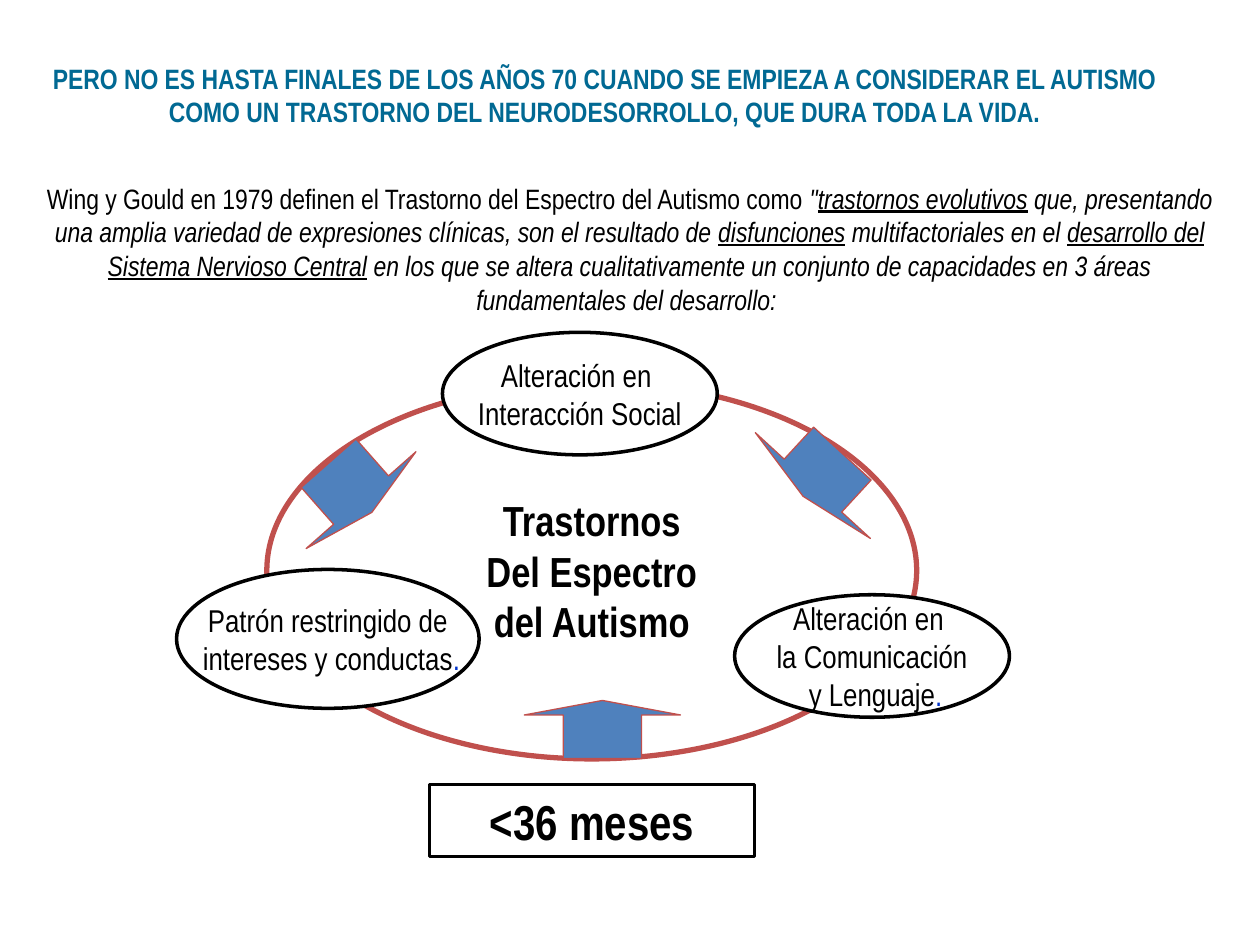
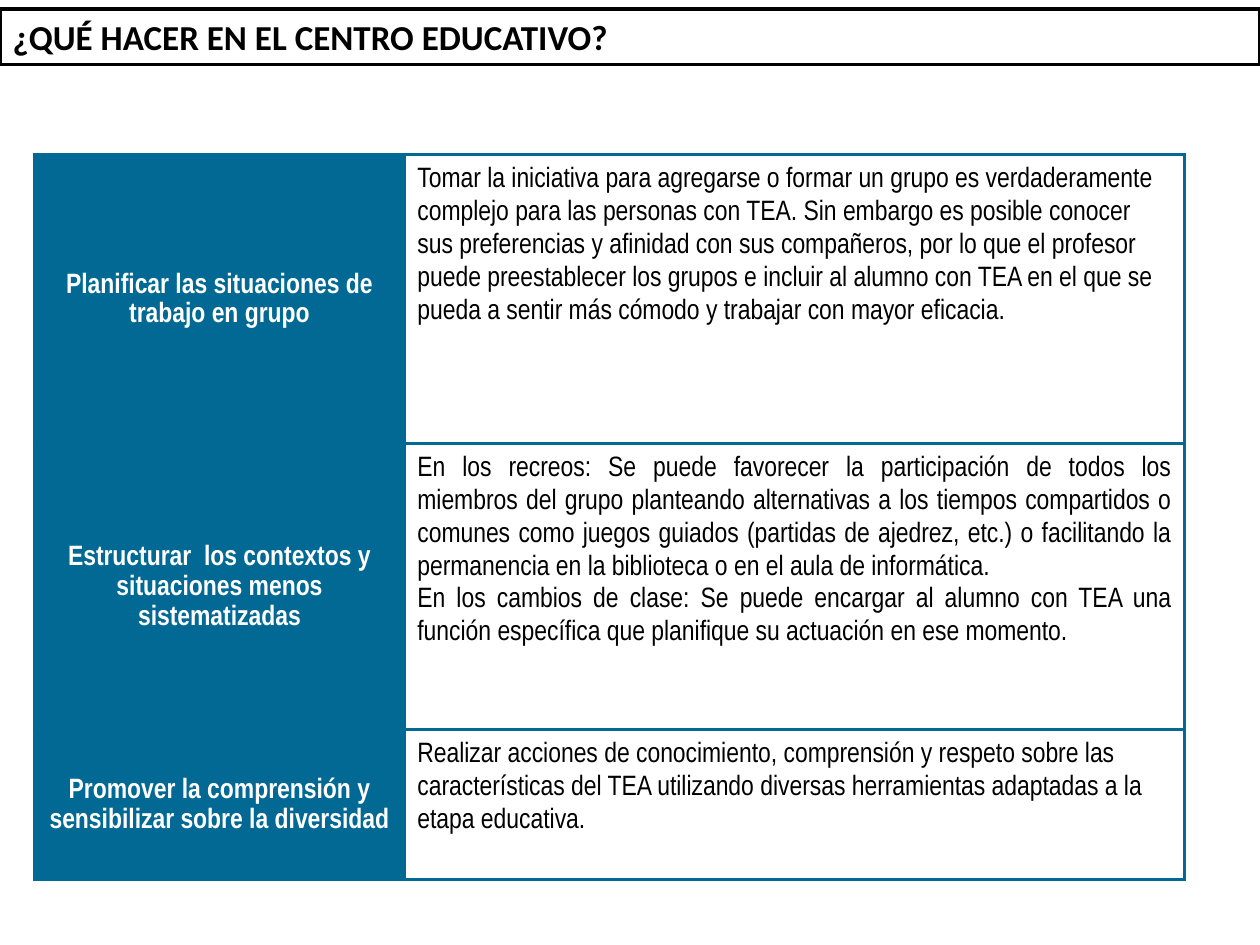
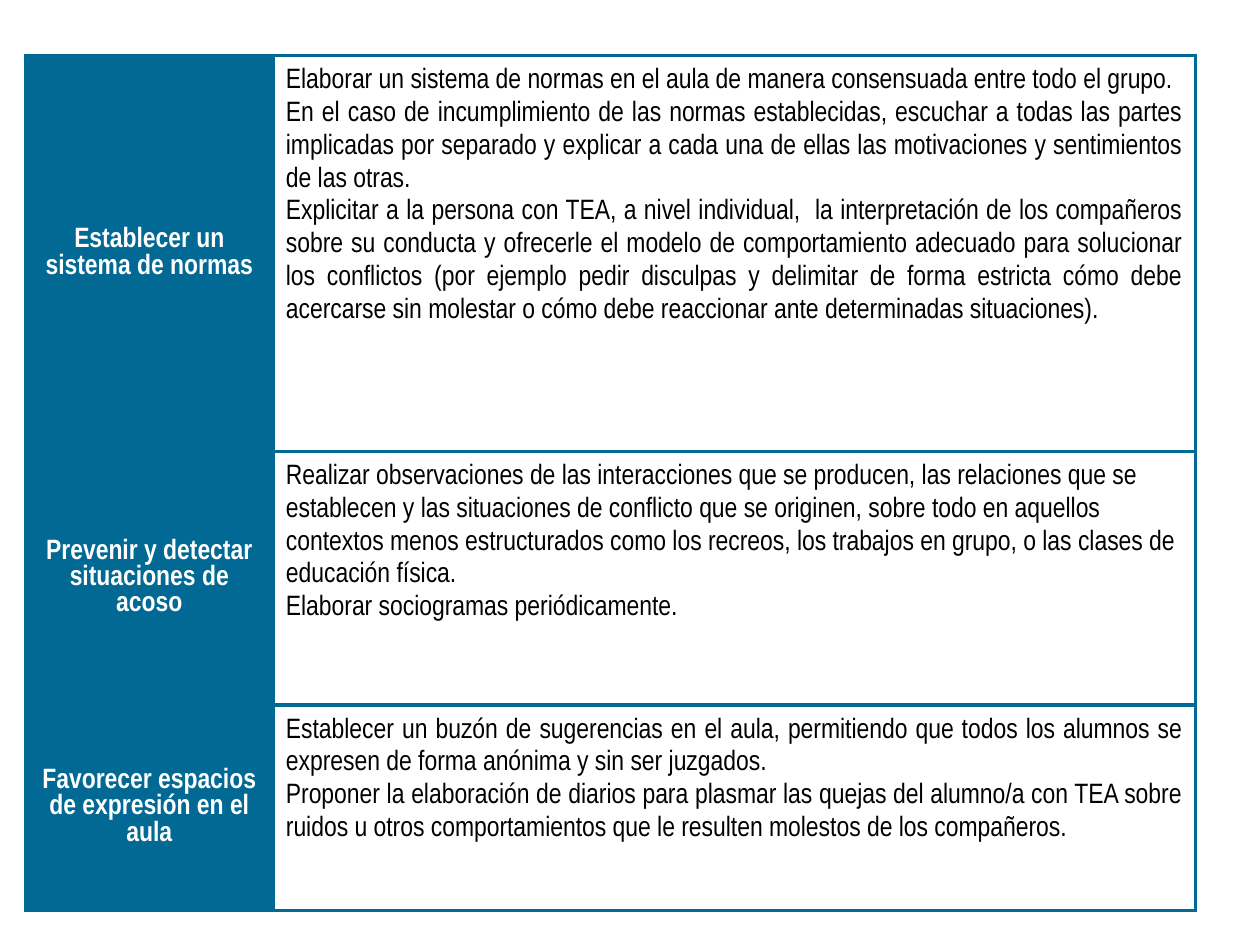
from dataclasses import dataclass

from lxml import etree
from pptx import Presentation
from pptx import util as u
from pptx.dml.color import RGBColor
from pptx.enum import shapes, text
from pptx.oxml import ns


@dataclass(frozen=True)
class Theme:
    teal: str = "016993"
    black: str = "000000"
    white: str = "FFFFFF"
    red: str = "C0504D"
    blue: str = "4F81BD"
    dot: str = "0033CC"
    font: str = "Arial Narrow"
    heading_font: str = "Calibri"
    body: int = 16
    node: int = 18
    heading: int = 20
    center: int = 24
    age: int = 28
    border: float = 2.25
    body_line: float = 18.75


T = Theme()
CENTER, LEFT, JUSTIFY = text.PP_ALIGN.CENTER, text.PP_ALIGN.LEFT, text.PP_ALIGN.JUSTIFY
MIDDLE, TOP = text.MSO_ANCHOR.MIDDLE, text.MSO_ANCHOR.TOP
OVAL, RECT, ARROW = (shapes.MSO_SHAPE.OVAL, shapes.MSO_SHAPE.RECTANGLE,
                     shapes.MSO_SHAPE.RIGHT_ARROW)

INTRO_TITLE = ("PERO NO ES HASTA FINALES DE LOS AÑOS 70 CUANDO SE EMPIEZA A CONSIDERAR EL "
               "AUTISMO COMO UN TRASTORNO DEL NEURODESORROLLO, QUE DURA TODA LA VIDA.")
IT = {"italic": True}
KEY = {"italic": True, "underline": True}
DEFINITION = [
    ("Wing y Gould en 1979 definen el Trastorno del Espectro del Autismo como ", {}),
    ('"', IT),
    ("trastornos evolutivos", KEY),
    (" que, presentando una amplia variedad de expresiones clínicas, son el resultado de ", IT),
    ("disfunciones", KEY),
    (" multifactoriales en el ", IT),
    ("desarrollo del Sistema Nervioso Central", KEY),
    (" en los que se altera cualitativamente un conjunto de capacidades en 3 áreas "
     "fundamentales del desarrollo: ", IT),
]
DOT = (".", {"color": T.dot})
CORE = ((5.38, 7.7, 13.1, 7.6), ["Trastornos", "Del Espectro", "del Autismo"])
AREAS = [
    ((3.56, 11.48, 6.1, 2.8),
     ["Patrón restringido de", [(" intereses y conductas", {}), DOT]]),
    ((14.81, 11.99, 5.54, 2.47),
     ["Alteración en ", "la Comunicación", [(" y Lenguaje", {}), DOT]]),
    ((8.92, 6.7, 5.54, 2.47), ["Alteración en ", "Interacción Social"]),
]
ARROWS = [
    ((6.4, 8.36, 1.32, 2.95), 48.6),
    ((11.56, 13.13, 1.17, 3.15), 270),
    ((16, 8, 1.17, 3.15), 132.6),
]
AGE = ((8.66, 15.82, 6.55, 1.45), ["<36 meses"])

SCHOOL_TITLE = "¿QUÉ HACER EN EL CENTRO EDUCATIVO?"
SCHOOL = {
    "at": (0.69, 3.12), "cols": (7.47, 15.72), "rows": (5.82, 5.77, 3.02), "label_line": 17,
    "cells": [
        ("Planificar las situaciones de trabajo en grupo", LEFT, [
            "Tomar la iniciativa para agregarse o formar un grupo es verdaderamente complejo "
            "para las personas con TEA. Sin embargo es posible conocer sus preferencias y "
            "afinidad con sus compañeros, por lo que el profesor puede preestablecer los grupos "
            "e incluir al alumno con TEA en el que se pueda a sentir más cómodo y trabajar con "
            "mayor eficacia."]),
        ("Estructurar  los contextos y situaciones menos sistematizadas", JUSTIFY, [
            "En los recreos: Se puede favorecer la participación de todos los miembros del grupo "
            "planteando alternativas a los tiempos compartidos o comunes como juegos guiados "
            "(partidas de ajedrez, etc.) o facilitando la permanencia en la biblioteca o en el "
            "aula de informática.",
            "En los cambios de clase: Se puede encargar al alumno con TEA una función específica "
            "que planifique su actuación en ese momento. "]),
        ("Promover la comprensión y sensibilizar sobre la diversidad", LEFT, [
            "Realizar acciones de conocimiento, comprensión y respeto sobre las características "
            "del TEA utilizando diversas herramientas adaptadas a la etapa educativa."]),
    ],
}
COEXISTENCE = {
    "at": (0.51, 1.12), "cols": (5, 18.59), "rows": (7.98, 5.11, 4.14), "label_line": 15.1,
    "cells": [
        ("Establecer un sistema de normas", JUSTIFY, [
            "Elaborar un sistema de normas en el aula de manera consensuada entre todo el grupo.",
            "En el caso de incumplimiento de las normas establecidas, escuchar a todas las partes "
            "implicadas por separado y explicar a cada una de ellas las motivaciones y "
            "sentimientos de las otras.",
            "Explicitar a la persona con TEA, a nivel individual,  la interpretación de los "
            "compañeros sobre su conducta y ofrecerle el modelo de comportamiento adecuado para "
            "solucionar los conflictos (por ejemplo pedir disculpas y delimitar de forma estricta "
            "cómo debe acercarse sin molestar o cómo debe reaccionar ante determinadas "
            "situaciones)."]),
        ("Prevenir y detectar situaciones de acoso", LEFT, [
            "Realizar observaciones de las interacciones que se producen, las relaciones que se "
            "establecen y las situaciones de conflicto que se originen, sobre todo en aquellos "
            "contextos menos estructurados como los recreos, los trabajos en grupo, o las clases "
            "de educación física.",
            "Elaborar sociogramas periódicamente."]),
        ("Favorecer espacios de expresión en el aula", JUSTIFY, [
            "Establecer un buzón de sugerencias en el aula, permitiendo que todos los alumnos se "
            "expresen de forma anónima y sin ser juzgados.",
            "Proponer la elaboración de diarios para plasmar las quejas del alumno/a con TEA "
            "sobre ruidos u otros comportamientos que le resulten molestos de los compañeros."]),
    ],
}


def assign(obj, values):
    for name, value in values.items():
        setattr(obj, name, value)


def write(tf, paragraphs, size, color=T.black, bold=False, font=T.font, align=CENTER, line=None):
    for i, runs in enumerate(paragraphs):
        p = tf.paragraphs[0] if i == 0 else tf.add_paragraph()
        assign(p, {"alignment": align, "space_before": u.Pt(0)})
        if line:
            p.line_spacing = u.Pt(line)
        for words, extra in [(runs, {})] if isinstance(runs, str) else runs:
            r = p.add_run()
            r.text = words
            fmt = {"name": font, "size": u.Pt(size), "bold": bold, **extra}
            r.font.color.rgb = RGBColor.from_string(fmt.pop("color", color))
            assign(r.font, fmt)


def paint(sp, line, width, fill=T.white):
    sp.fill.solid()
    sp.fill.fore_color.rgb = RGBColor.from_string(fill)
    sp.line.color.rgb = RGBColor.from_string(line)
    sp.line.width = u.Pt(width)


def add_shape(s, kind, box, line, width, fill=T.white):
    sp = s.shapes.add_shape(kind, *map(u.Cm, box))
    sp.shadow.inherit = False
    paint(sp, line, width, fill)
    sp.text_frame.word_wrap = False
    sp.text_frame.vertical_anchor = MIDDLE
    return sp


def fill_placeholder(sp, box, paragraphs, anchor=MIDDLE, **style):
    assign(sp, dict(zip(("left", "top", "width", "height"), map(u.Cm, box))))
    assign(sp.text_frame, {"word_wrap": True, "auto_size": text.MSO_AUTO_SIZE.NONE,
                           "vertical_anchor": anchor})
    write(sp.text_frame, paragraphs, **style)


def add_borders(cell):
    tc_pr = cell._tc.get_or_add_tcPr()
    for i, side in enumerate(("lnL", "lnR", "lnT", "lnB")):
        ln = etree.Element(ns.qn(f"a:{side}"), w=str(u.Pt(T.border)))
        fill = etree.SubElement(ln, ns.qn("a:solidFill"))
        etree.SubElement(fill, ns.qn("a:srgbClr"), val=T.teal)
        tc_pr.insert(i, ln)


def add_guide(s, guide):
    cols, rows = guide["cols"], guide["rows"]
    box = (*guide["at"], sum(cols), sum(rows))
    table = s.shapes.add_table(len(rows), len(cols), *map(u.Cm, box)).table
    assign(table, {"first_row": False, "horz_banding": False})
    for col, width in zip(table.columns, cols):
        col.width = u.Cm(width)
    for row, height, (label, align, advice) in zip(table.rows, rows, guide["cells"]):
        row.height = u.Cm(height)
        parts = [
            (T.teal, MIDDLE, [label], {"color": T.white, "bold": True,
                                       "line": guide["label_line"]}),
            (T.white, TOP, advice, {"align": align, "line": T.body_line}),
        ]
        for cell, (fill, anchor, paragraphs, style) in zip(row.cells, parts):
            cell.fill.solid()
            cell.fill.fore_color.rgb = RGBColor.from_string(fill)
            cell.vertical_anchor = anchor
            add_borders(cell)
            write(cell.text_frame, paragraphs, T.body, **style)


def definition_slide(prs):
    s = prs.slides.add_slide(prs.slide_layouts[1])
    fill_placeholder(s.shapes.title, (0.76, 0.91, 22.86, 2.01), [INTRO_TITLE],
                     size=T.body, color=T.teal, bold=True)
    body = s.placeholders[1]
    fill_placeholder(body, (0.53, 3.53, 24.33, 3), [DEFINITION], anchor=TOP, size=T.body)
    p_pr = body.text_frame.paragraphs[0]._p.get_or_add_pPr()
    p_pr.set("marL", "0")
    p_pr.set("indent", "0")
    etree.SubElement(p_pr, ns.qn("a:buNone"))

    box, words = CORE
    write(add_shape(s, OVAL, box, T.red, 3).text_frame, words, T.center, bold=True)
    for box, words in AREAS:
        write(add_shape(s, OVAL, box, T.black, 2).text_frame, words, T.node)
    for box, angle in ARROWS:
        sp = add_shape(s, ARROW, box, T.red, 0.75, T.blue)
        sp.rotation = angle
        sp.adjustments[1] = 0.25
    box, words = AGE
    write(add_shape(s, RECT, box, T.black, 2).text_frame, words, T.age, bold=True)


def school_slide(prs):
    s = prs.slides.add_slide(prs.slide_layouts[5])
    add_guide(s, SCHOOL)
    title = s.shapes.title
    fill_placeholder(title, (0, 0.18, 25.4, 1.12), [SCHOOL_TITLE], size=T.heading,
                     bold=True, font=T.heading_font, align=LEFT)
    paint(title, T.black, 2)


def main():
    prs = Presentation()
    assign(prs, {"slide_width": u.Cm(25.4), "slide_height": u.Cm(19.05)})
    definition_slide(prs)
    school_slide(prs)
    add_guide(prs.slides.add_slide(prs.slide_layouts[6]), COEXISTENCE)
    prs.save("out.pptx")


if __name__ == "__main__":
    main()
